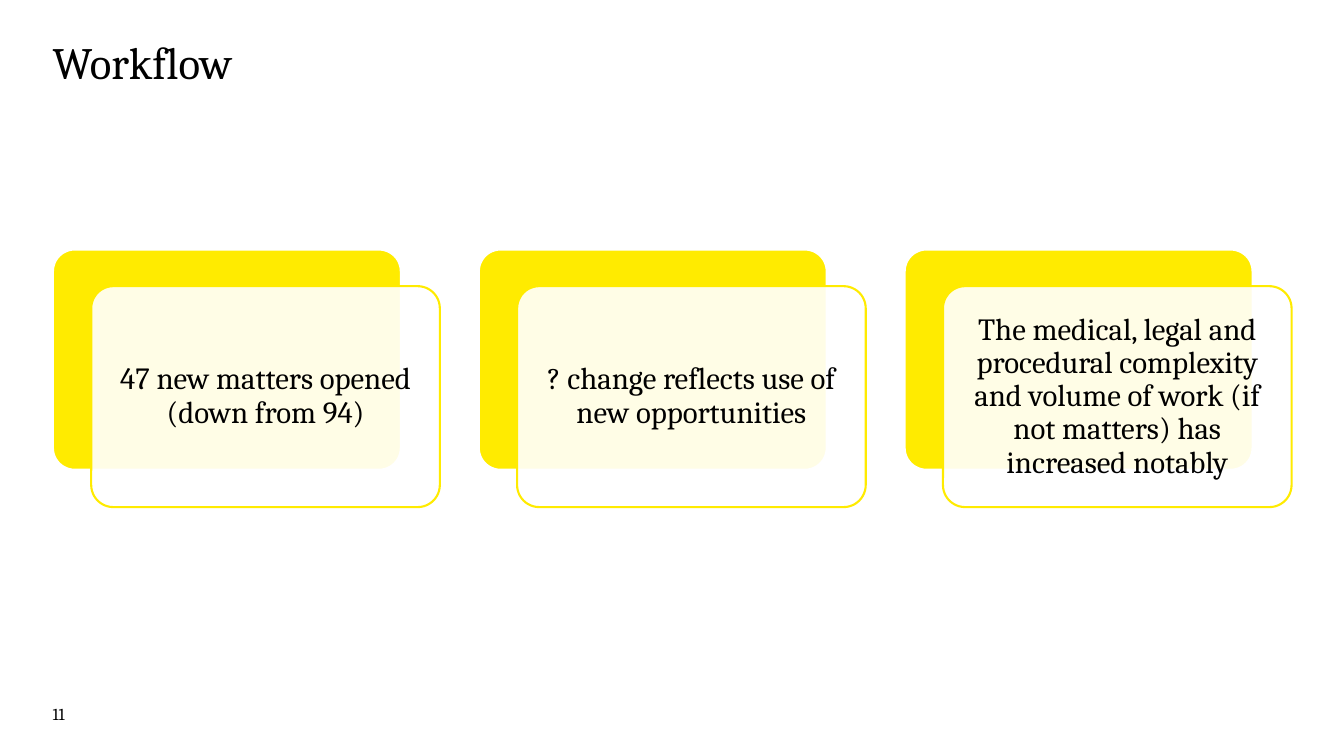
from lxml import etree
from pptx import Presentation
from pptx.dml.color import RGBColor
from pptx.enum import shapes, text
from pptx.oxml import ns
from pptx.util import Pt


def tint(hue):
    return RGBColor.from_string(hue)


def write(frame, words, size, inset=0):
    frame.word_wrap = True
    frame.margin_left = frame.margin_right = Pt(inset)
    frame.margin_top = frame.margin_bottom = Pt(inset)
    para = frame.paragraphs[0]
    run = para.add_run()
    run.text = words
    run.font.name = "Cambria"
    run.font.size = Pt(size)
    run.font.color.rgb = tint("000000")
    return para


deck = Presentation()
deck.slide_width, deck.slide_height = Pt(960), Pt(540)
slide = deck.slides.add_slide(deck.slide_layouts[6])
left = 37.6

# Title
title = slide.shapes.add_textbox(Pt(left), Pt(28.8), Pt(884), Pt(84))
write(title.text_frame, "Workflow", 32).line_spacing = 0.9

# Page number
page = slide.shapes.add_textbox(Pt(left), Pt(502.6), Pt(34), Pt(29))
write(page.text_frame, "11", 12).space_after = Pt(6)

# Cards: a yellow back and a translucent front, shifted down and right
notes = [
    "47 new matters opened (down from 94)",
    "? change reflects use of new opportunities",
    "The medical, legal and procedural complexity and volume of work "
    "(if not matters) has increased notably",
]
top, wide, high, step = 178, 249, 157.8, 304.2
layers = [
    (0, 0, "FFEB00", "FFFFFF", 2),
    (27.6, 26.4, "FFFFFF", "FFEB00", 1.5),
]
for i, note in enumerate(notes):
    for dx, dy, fill, edge, weight in layers:
        card = slide.shapes.add_shape(
            shapes.MSO_SHAPE.ROUNDED_RECTANGLE,
            Pt(left + i * step + dx), Pt(top + dy), Pt(wide), Pt(high))
        card.adjustments[0] = 0.1
        card.shadow.inherit = False
        card.fill.solid()
        card.fill.fore_color.rgb = tint(fill)
        card.line.color.rgb = tint(edge)
        card.line.width = Pt(weight)

    # The front card is 90% opaque and holds the words
    color = card.fill._xPr.find(ns.qn("a:solidFill"))[0]
    etree.SubElement(color, ns.qn("a:alpha"), val="90000")
    card.text_frame.vertical_anchor = text.MSO_ANCHOR.MIDDLE
    para = write(card.text_frame, note, 22, 6.6)
    para.alignment = text.PP_ALIGN.CENTER
    para.line_spacing = 0.9
    para.space_after = Pt(7.7)

deck.save("out.pptx")
